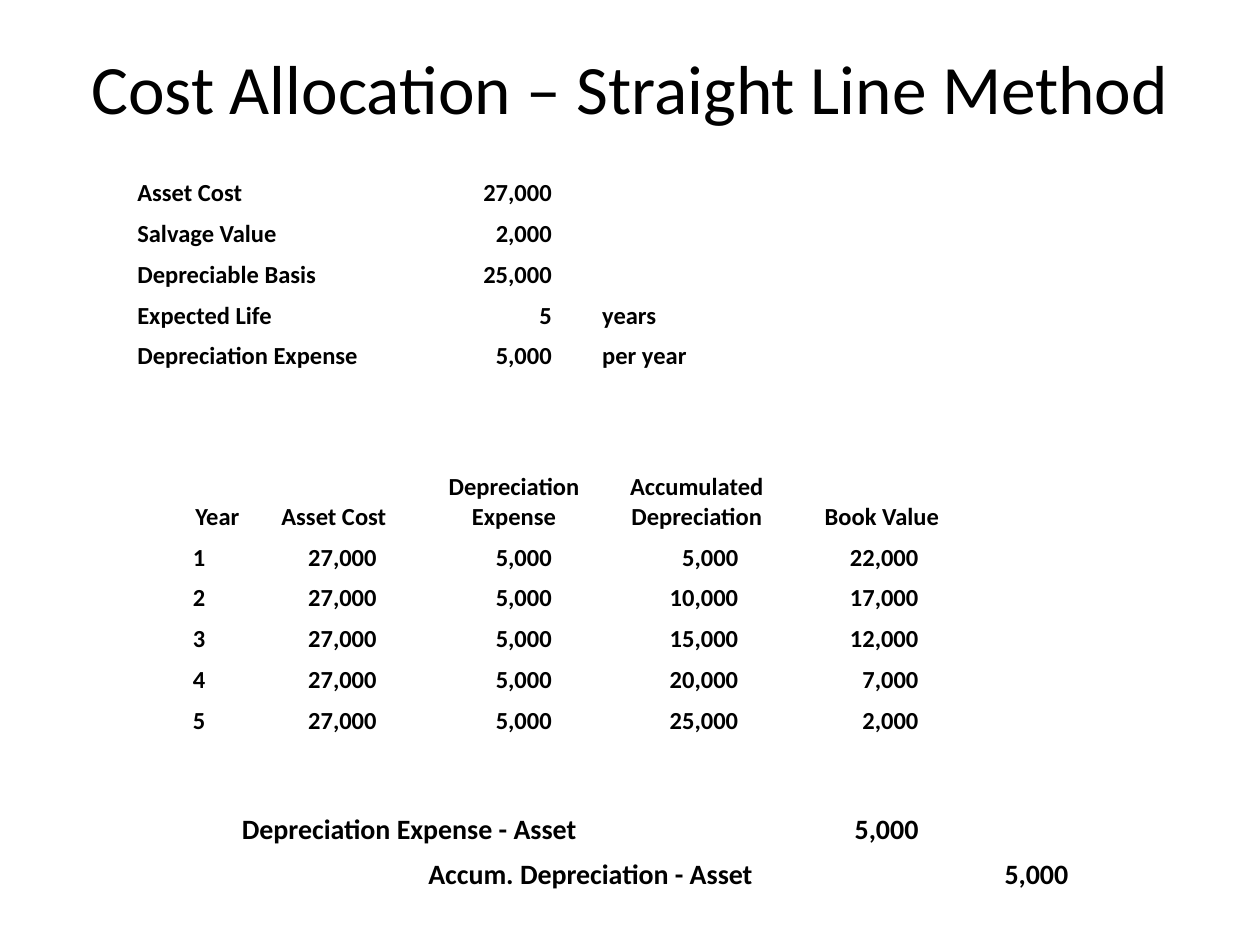
from pptx import Presentation
from pptx.dml.color import RGBColor
from pptx.enum.text import MSO_ANCHOR, PP_ALIGN
from pptx.util import Inches, Pt

COLORS = {"text": "000000"}
FONT = "Calibri"

# Table geometry in inches
COLUMN_WIDTHS = [0.83, 1.48, 1.38, 1.52, 1.42, 1.12]
NUMBER_INDENTS = [0.28, 0.40, 0.39, 0.43, 0.42, 0.35]  # right of each number
TABLE_HEIGHT = 5.75
SPECIAL_HEIGHTS = {6: 0.95, 12: 0.26, 13: 0.26, 14: 0.36, 15: 0.36}

# Table content
BLANK = [""] * 6
HEADER_ROW = 6
HEADER = ["Year", "Asset Cost", "Depreciation Expense",
          "Accumulated Depreciation", "Book Value", ""]
ASSET = [
    ["Asset Cost", "", "27,000", "", "", ""],
    ["Salvage Value", "", "2,000", "", "", ""],
    ["Depreciable Basis", "", "25,000", "", "", ""],
    ["Expected Life", "", "5", "years", "", ""],
    ["Depreciation Expense", "", "5,000", "per year", "", ""],
]
COST, EXPENSE = 27000, 5000
SCHEDULE = [
    [str(year), f"{COST:,}", f"{EXPENSE:,}", f"{EXPENSE * year:,}",
     f"{COST - EXPENSE * year:,}", ""]
    for year in range(1, 6)
]
JOURNAL = [
    ["", "Depreciation Expense - Asset", "", "", "5,000", ""],
    ["", "", "Accum. Depreciation - Asset", "", "", "5,000"],
]
ROWS = ASSET + [BLANK, HEADER] + SCHEDULE + [BLANK, BLANK] + JOURNAL
JOURNAL_START = len(ROWS) - len(JOURNAL)

# Merged cells: row, first column, last column
SPANS = [(row, 0, 1) for row in range(len(ASSET))]
SPANS += [(JOURNAL_START, 1, 3), (JOURNAL_START + 1, 2, 4 )]


class SlideBuilder:
    def __init__(self, slide):
        self.slide = slide

    def style(self, paragraph, size, bold, alignment):
        paragraph.alignment = alignment
        paragraph.font.name = FONT
        paragraph.font.size = Pt(size)
        paragraph.font.bold = bold
        paragraph.font.color.rgb = RGBColor.from_string(COLORS["text"])

    def title(self, text, left, top, width, height):
        shape = self.slide.shapes.title
        shape.left, shape.top = Inches(left), Inches(top)
        shape.width, shape.height = Inches(width), Inches(height)
        shape.text_frame.text = text
        shape.text_frame.vertical_anchor = MSO_ANCHOR.MIDDLE
        self.style(shape.text_frame.paragraphs[0], 39.6, False, PP_ALIGN.CENTER)

    def cell(self, cell, text, size, alignment, right=0.01):
        cell.fill.background()
        cell.vertical_anchor = MSO_ANCHOR.BOTTOM
        cell.margin_left = cell.margin_top = Inches(0.01)
        cell.margin_right, cell.margin_bottom = Inches(right), 0
        cell.text = text
        self.style(cell.text_frame.paragraphs[0], size, True, alignment)

    def table(self, rows, left, top):
        table = self.slide.shapes.add_table(
            len(rows), len(COLUMN_WIDTHS), Inches(left), Inches(top),
            Inches(sum(COLUMN_WIDTHS)), Inches(TABLE_HEIGHT)).table
        table.first_row = table.horz_banding = False

        # Ordinary rows share the height the special rows leave
        ordinary = ((TABLE_HEIGHT - sum(SPECIAL_HEIGHTS.values()))
                    / (len(rows) - len(SPECIAL_HEIGHTS)))
        for index, row in enumerate(table.rows):
            row.height = Inches(SPECIAL_HEIGHTS.get(index, ordinary))
        for column, width in zip(table.columns, COLUMN_WIDTHS):
            column.width = Inches(width)

        # Numbers align right, column heads centre, labels align left
        for row, texts in enumerate(rows):
            for column, text in enumerate(texts):
                size = 16 if row >= JOURNAL_START and text else 14
                alignment, right = PP_ALIGN.LEFT, 0.01
                if text.replace(",", "").isdigit():
                    alignment, right = PP_ALIGN.RIGHT, NUMBER_INDENTS[column]
                elif row == HEADER_ROW:
                    alignment = PP_ALIGN.CENTER if column else PP_ALIGN.RIGHT
                self.cell(table.cell(row, column), text, size, alignment, right)

        for row, first, last in SPANS:
            table.cell(row, first).merge(table.cell(row, last))


def main():
    presentation = Presentation()
    presentation.slide_width = Inches(10)
    presentation.slide_height = Inches(7.5)
    slide = presentation.slides.add_slide(presentation.slide_layouts[5])
    builder = SlideBuilder(slide)
    builder.title("Cost Allocation – Straight Line Method", 0.5, 0.3, 9, 0.78)
    builder.table(ROWS, 1.08, 1.33)
    presentation.save("out.pptx")


if __name__ == "__main__":
    main()
